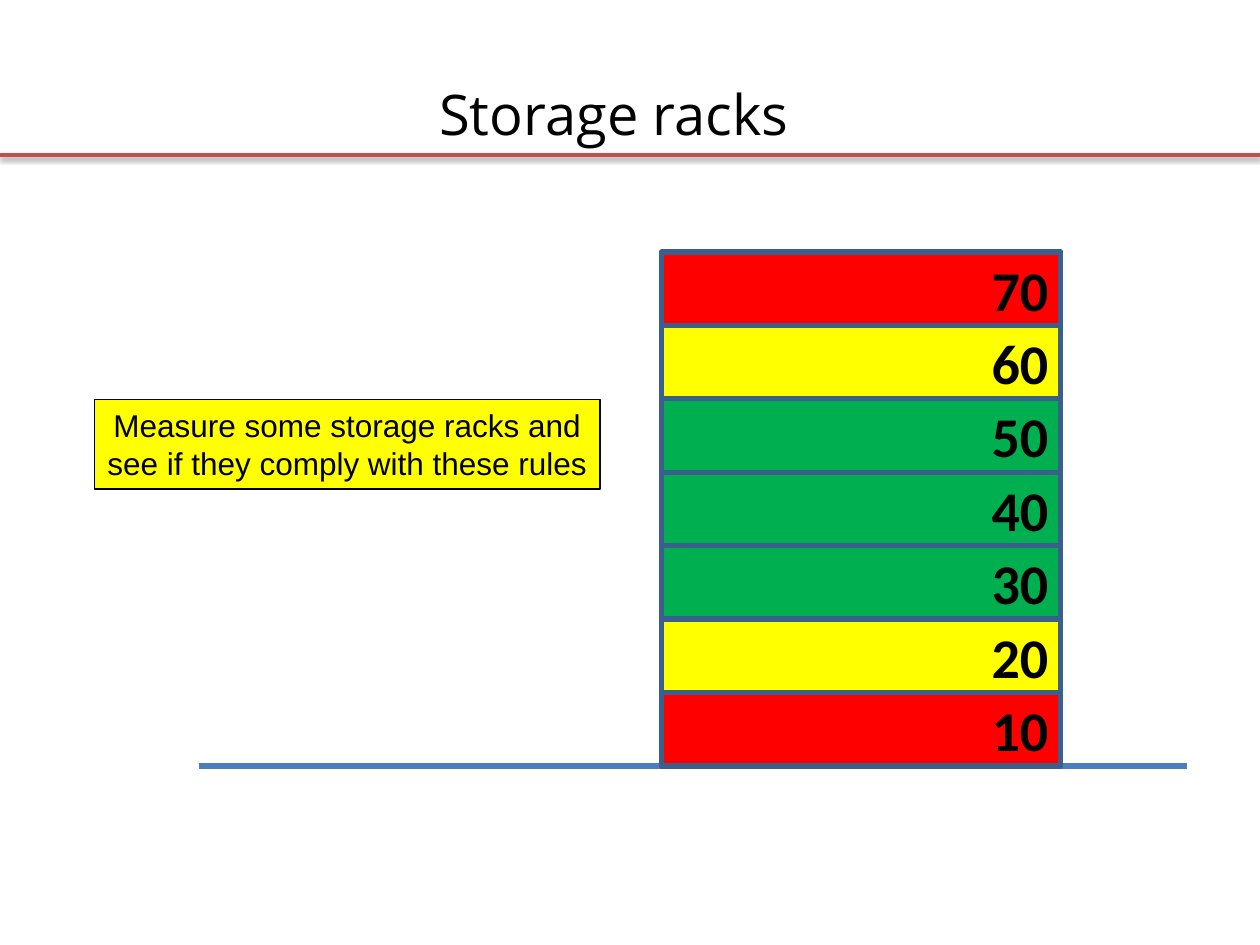
from lxml.etree import SubElement
from pptx import Presentation
from pptx.dml.color import RGBColor
from pptx.enum.shapes import MSO_CONNECTOR as Connector, MSO_SHAPE as Shape
from pptx.enum.text import MSO_ANCHOR as Anchor, MSO_AUTO_SIZE as AutoSize, PP_ALIGN as Align
from pptx.oxml.ns import qn
from pptx.util import Inches, Pt

RED, YELLOW, GREEN, BLACK = "FF0000", "FFFF00", "00B050", "000000"
SHELF_COLOURS = [RED, YELLOW, GREEN, GREEN, GREEN, YELLOW, RED]
RACK_LEFT, RACK_TOP, RACK_WIDTH, RACK_HEIGHT = 5.25, 2, 3.17, 4.08
TITLE_FONT = {"name": "Open Sans", "size": Pt(32), "bold": False}
SHELF_FONT = {"name": "Calibri", "size": Pt(32), "bold": True}
NOTE_FONT = {"name": "Arial", "size": Pt(18), "bold": False}


def colour(hex_value):
    return RGBColor.from_string(hex_value)


def write(holder, text, font_format, align):
    frame = holder.text_frame
    frame.word_wrap = True
    frame.vertical_anchor = Anchor.MIDDLE
    frame.text = text
    paragraph = frame.paragraphs[0]
    paragraph.alignment = align
    for key, value in font_format.items():
        setattr(paragraph.font, key, value)
    paragraph.font.color.rgb = colour(BLACK)


def add_title(slide, text):
    title = slide.shapes.title
    place = {"left": 0.75, "top": 0.56, "width": 8.25, "height": 0.67}
    for key, value in place.items():
        setattr(title, key, Inches(value))
    write(title, text, TITLE_FONT, Align.CENTER)
    title.text_frame.auto_size = AutoSize.NONE


def add_rule(slide, left, right, y, line_colour, weight):
    rule = slide.shapes.add_connector(
        Connector.STRAIGHT, Inches(left), Inches(y), Inches(right), Inches(y))
    rule.line.color.rgb = colour(line_colour)
    rule.line.width = Pt(weight)
    return SubElement(rule._element.spPr, qn("a:effectLst"))


def add_drop_shadow(effects):
    shadow = SubElement(effects, qn("a:outerShdw"), blurRad=str(Pt(3.1)),
                        dist=str(Pt(1.6)), dir="5400000", rotWithShape="0")
    tint = SubElement(shadow, qn("a:srgbClr"), val=BLACK)
    SubElement(tint, qn("a:alpha"), val="38000")


def add_box(shapes, place, fill, border, weight, text, font_format, align):
    box = shapes.add_shape(Shape.RECTANGLE, *map(Inches, place))
    box.shadow.inherit = False
    box.fill.solid()
    box.fill.fore_color.rgb = colour(fill)
    box.line.color.rgb = colour(border)
    box.line.width = Pt(weight)
    write(box, text, font_format, align)
    return box


def add_rack(slide):
    rack = slide.shapes.add_group_shape()
    shelf_height = RACK_HEIGHT / len(SHELF_COLOURS)
    for level, fill in enumerate(SHELF_COLOURS, start=1):
        top = RACK_TOP + RACK_HEIGHT - level * shelf_height
        add_box(rack.shapes, (RACK_LEFT, top, RACK_WIDTH, shelf_height),
                fill, "3A5F8C", 3, str(level * 10), SHELF_FONT, Align.RIGHT)


def main():
    deck = Presentation()
    deck.slide_width, deck.slide_height = Inches(10), Inches(7.5)
    slide = deck.slides.add_slide(deck.slide_layouts[5])
    add_drop_shadow(add_rule(slide, 0, 10, 1.23, "C0504D", 2))
    add_title(slide, "Storage racks")
    add_rule(slide, 1.58, 9.42, RACK_TOP + RACK_HEIGHT, "4B7EBC", 3)
    add_rack(slide)
    note = add_box(slide.shapes, (0.75, 3.17, 4.01, 0.71), YELLOW, BLACK, 1,
                   "Measure some storage racks and see if they comply with these rules",
                   NOTE_FONT, Align.CENTER)
    note.text_frame.auto_size = AutoSize.SHAPE_TO_FIT_TEXT
    deck.save("out.pptx")


if __name__ == "__main__":
    main()
